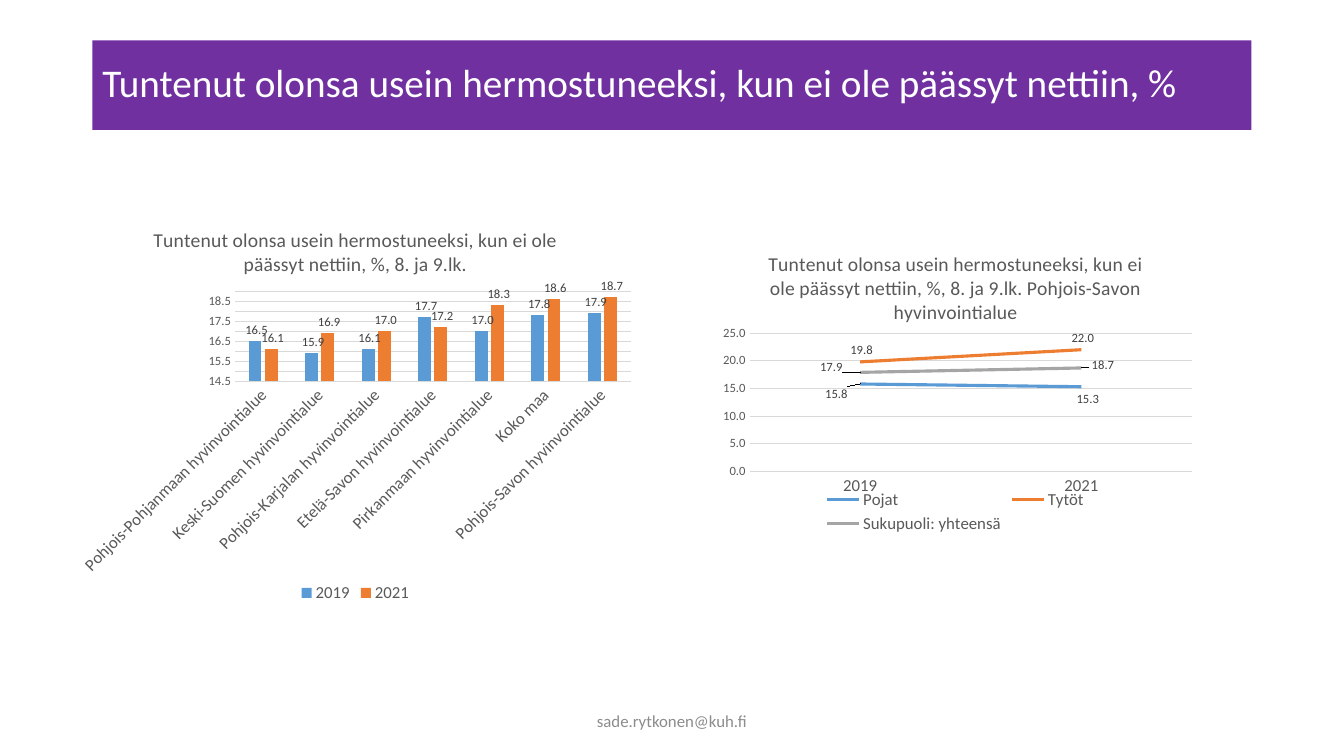
"""Build a slide comparing school survey results by wellbeing region and by gender."""
from dataclasses import dataclass, field

from pptx import Presentation
from pptx.chart.axis import CategoryAxis, ValueAxis
from pptx.chart.chart import Chart
from pptx.chart.data import CategoryChartData
from pptx.chart.series import BarSeries, LineSeries
from pptx.dml.color import RGBColor
from pptx.enum.chart import XL_CHART_TYPE, XL_LABEL_POSITION, XL_LEGEND_POSITION, XL_TICK_MARK
from pptx.enum.shapes import MSO_SHAPE
from pptx.enum.text import MSO_ANCHOR, PP_ALIGN
from pptx.oxml import parse_xml
from pptx.oxml.ns import nsdecls, qn
from pptx.slide import Slide
from pptx.text.text import Font
from pptx.util import Pt

COLUMNS, LINES = XL_CHART_TYPE.COLUMN_CLUSTERED, XL_CHART_TYPE.LINE
ABOVE, OUTSIDE = XL_LABEL_POSITION.ABOVE, XL_LABEL_POSITION.OUTSIDE_END
BOTTOM = XL_LEGEND_POSITION.BOTTOM
NO_TICK = XL_TICK_MARK.NONE
RECTANGLE = MSO_SHAPE.RECTANGLE
MIDDLE = MSO_ANCHOR.MIDDLE
LEFT, CENTER = PP_ALIGN.LEFT, PP_ALIGN.CENTER

FONT = "Calibri"
NUMBER_FORMAT = r"#\ ##0.0"
COLORS = {
    "banner": "7030A0", "white": "FFFFFF", "footer": "8C8C8C",
    "axis": "595959", "label": "404040", "grid": "D9D9D9",
    "blue": "5B9BD5", "orange": "ED7D31", "gray": "A5A5A5",
}


@dataclass
class Measure:
    """One data series; label_shifts moves its point labels by chart fractions."""
    name: str
    values: tuple[float, ...]
    color: str
    label_shifts: tuple[tuple[float, float], ...] = ()


@dataclass
class Scale:
    """Value axis range and step."""
    low: float
    high: float
    step: float


@dataclass
class Panel:
    """One chart with its box in points and its plot area in chart fractions."""
    kind: XL_CHART_TYPE
    box: tuple[float, ...]
    title: str
    categories: tuple[str, ...]
    scale: Scale
    plot: tuple[float, ...]
    category_angle: int = 0
    measures: list[Measure] = field(default_factory=list)


@dataclass
class Caption:
    """One line of slide text, on a filled band if fill is given."""
    text: str
    box: tuple[float, ...]
    size: float
    color: str
    align: PP_ALIGN
    fill: str = ""


QUESTION = "Tuntenut olonsa usein hermostuneeksi, kun ei ole päässyt nettiin, %"
CAPTIONS = [
    Caption(QUESTION, (66, 28.8, 828, 64), 28, "white", LEFT, "banner"),
    Caption("sade.rytkonen@kuh.fi", (318, 500.5, 324, 28.75), 12, "footer", CENTER),
]
REGIONS = ("Pohjois-Pohjanmaan", "Keski-Suomen", "Pohjois-Karjalan", "Etelä-Savon",
           "Pirkanmaan", "Koko maa", "Pohjois-Savon")
PANELS = [
    Panel(
        COLUMNS, (49, 149.8, 409.7, 283.7), f"{QUESTION}, 8. ja 9.lk.",
        tuple(r if r == "Koko maa" else f"{r} hyvinvointialue" for r in REGIONS),
        Scale(14.5, 19, 0.5), (0.29, 0.205, 0.69, 0.227), -45,
        [
            Measure("2019", (16.5, 15.9, 16.1, 17.7, 17, 17.8, 17.9), "blue"),
            Measure("2021", (16.1, 16.9, 17, 17.2, 18.3, 18.6, 18.7), "orange"),
        ],
    ),
    Panel(
        LINES, (502.6, 167.8, 360, 216),
        f"{QUESTION}, 8. ja 9.lk. Pohjois-Savon hyvinvointialue",
        ("2019", "2021"), Scale(0, 25, 5), (0.091, 0.325, 0.878, 0.457), 0,
        [
            Measure("Pojat", (15.8, 15.3), "blue", ((-0.05, 0.07), (0.01, 0.08))),
            Measure("Tytöt", (19.8, 22), "orange"),
            Measure("Sukupuoli: yhteensä", (17.9, 18.7), "gray",
                    ((-0.06, 0.02), (0.04, 0.03))),
        ],
    ),
]


def rgb(color: str) -> RGBColor:
    return RGBColor.from_string(COLORS[color])


def style_font(font: Font, size: float, color: str) -> None:
    font.name, font.size, font.bold = FONT, Pt(size), False
    font.color.rgb = rgb(color)


def layout_xml(**settings: str | float):
    children = "".join(f'<c:{key} val="{value}"/>' for key, value in settings.items())
    return parse_xml(f'<c:layout {nsdecls("c")}><c:manualLayout>{children}'
                     "</c:manualLayout></c:layout>")


def add_caption(slide: Slide, caption: Caption) -> None:
    box = [Pt(length) for length in caption.box]
    if caption.fill:
        holder = slide.shapes.add_shape(RECTANGLE, *box)
        holder.shadow.inherit = False
        holder.fill.solid()
        holder.fill.fore_color.rgb = rgb(caption.fill)
        holder.line.fill.background()
    else:
        holder = slide.shapes.add_textbox(*box)
    frame = holder.text_frame
    frame.word_wrap, frame.vertical_anchor = True, MIDDLE
    paragraph = frame.paragraphs[0]
    paragraph.text, paragraph.alignment = caption.text, caption.align
    paragraph.line_spacing = 0.9 if caption.fill else 1
    style_font(paragraph.font, caption.size, caption.color)


def style_axes(categories: CategoryAxis, values: ValueAxis, panel: Panel) -> None:
    for axis, size in ((categories, 12), (values, 9)):
        axis.major_tick_mark = axis.minor_tick_mark = NO_TICK
        style_font(axis.tick_labels.font, size, "axis")
    categories.format.line.color.rgb = rgb("grid")
    categories.format.line.width = Pt(0.75)
    if panel.category_angle:
        body = categories._element.find(f'{qn("c:txPr")}/{qn("a:bodyPr")}')
        body.set("rot", str(panel.category_angle * 60000))
    values.minimum_scale, values.maximum_scale = panel.scale.low, panel.scale.high
    values.major_unit = panel.scale.step
    values.format.line.fill.background()
    values.major_gridlines.format.line.color.rgb = rgb("grid")
    values.major_gridlines.format.line.width = Pt(0.75)
    values.tick_labels.number_format = NUMBER_FORMAT
    values.tick_labels.number_format_is_linked = False


def style_series(series: BarSeries | LineSeries, measure: Measure, kind: XL_CHART_TYPE) -> None:
    if kind == LINES:
        series.smooth = False
        series.format.line.color.rgb = rgb(measure.color)
        series.format.line.width = Pt(2.25)
    else:
        series.format.fill.solid()
        series.format.fill.fore_color.rgb = rgb(measure.color)
    position = ABOVE if kind == LINES else OUTSIDE
    labels = series.data_labels
    labels.show_value, labels.position = True, position
    labels.number_format, labels.number_format_is_linked = NUMBER_FORMAT, False
    style_font(labels.font, 9, "label")
    for index, (across, down) in enumerate(measure.label_shifts):
        label = series.points[index].data_label
        label.position = position
        style_font(label.font, 9, "label")
        labels._element.findall(qn("c:dLbl"))[index].insert(1, layout_xml(x=across, y=down))


def place_plot(chart: Chart, plot: tuple[float, ...]) -> None:
    area = chart._chartSpace.chart.plotArea
    for layout in area.findall(qn("c:layout")):
        area.remove(layout)
    x, y, w, h = plot
    area.insert(0, layout_xml(layoutTarget="inner", xMode="edge", yMode="edge",
                              x=x, y=y, w=w, h=h))


def add_panel(slide: Slide, panel: Panel) -> None:
    data = CategoryChartData(number_format=NUMBER_FORMAT)
    data.categories = panel.categories
    for measure in panel.measures:
        data.add_series(measure.name, measure.values)
    box = [Pt(length) for length in panel.box]
    chart = slide.shapes.add_chart(panel.kind, *box, data).chart
    chart.font.name, chart.font.size = FONT, Pt(10)
    chart.has_title = True
    heading = chart.chart_title.text_frame.paragraphs[0]
    heading.text = panel.title
    style_font(heading.font, 14, "axis")
    chart.has_legend = True
    chart.legend.position, chart.legend.include_in_layout = BOTTOM, False
    style_font(chart.legend.font, 12, "axis")
    plot = chart.plots[0]
    plot.vary_by_categories = False
    if panel.kind == COLUMNS:
        plot.gap_width, plot.overlap = 219, -27
    style_axes(chart.category_axis, chart.value_axis, panel)
    for series, measure in zip(plot.series, panel.measures):
        style_series(series, measure, panel.kind)
    place_plot(chart, panel.plot)


def main() -> None:
    deck = Presentation()
    deck.slide_width, deck.slide_height = Pt(960), Pt(540)
    slide = deck.slides.add_slide(deck.slide_layouts[6])
    for caption in CAPTIONS:
        add_caption(slide, caption)
    for panel in PANELS:
        add_panel(slide, panel)
    deck.save("out.pptx")


if __name__ == "__main__":
    main()
